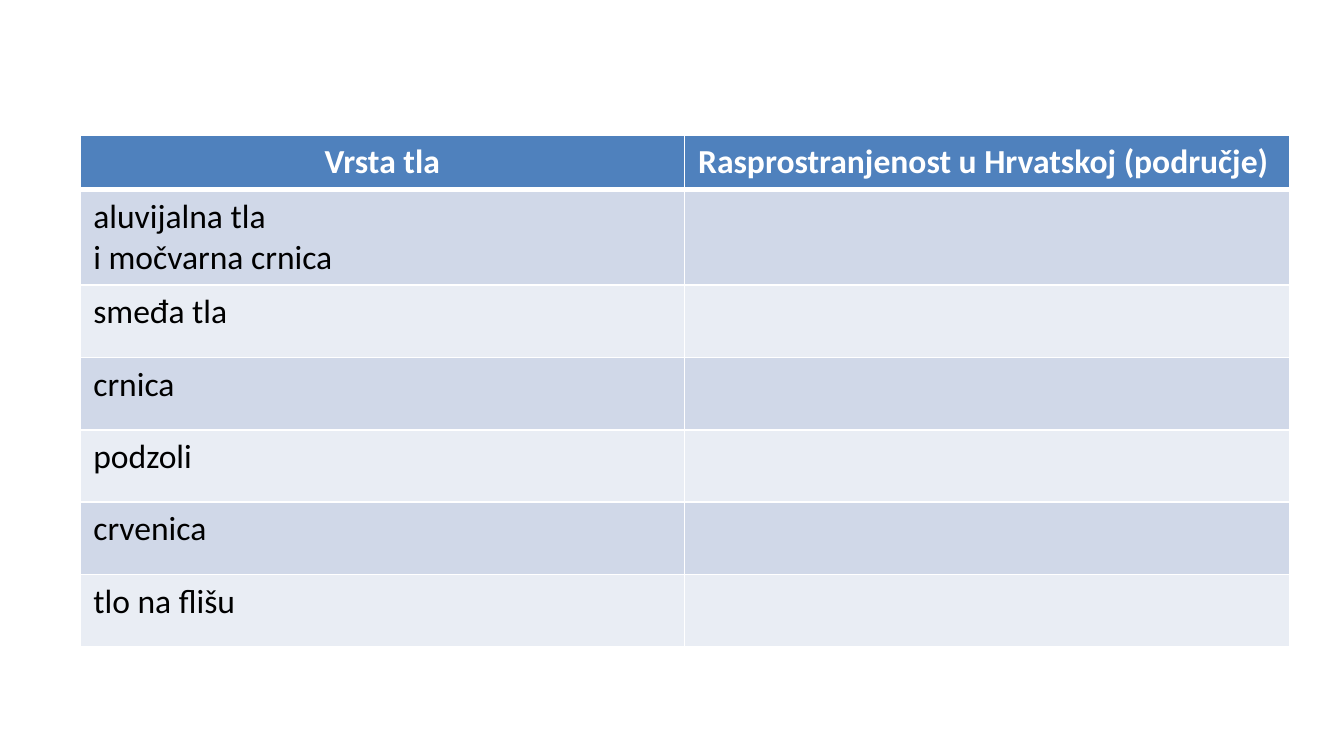
from lxml.etree import SubElement
from pptx import Presentation
from pptx.dml.color import RGBColor
from pptx.enum.text import PP_ALIGN as Align
from pptx.oxml.ns import qn
from pptx.util import Pt

WHITE = "FFFFFF"
BLACK = "000000"
HEADER_FILL = "4F81BD"
BAND_FILLS = ("D0D8E8", "E9EDF4")

HEADERS = ("Vrsta tla", "Rasprostranjenost u Hrvatskoj (područje)")
SOIL_TYPES = (
    ("aluvijalna tla", "i močvarna crnica"),
    ("smeđa tla",),
    ("crnica",),
    ("podzoli",),
    ("crvenica",),
    ("tlo na flišu",),
)
COLUMN_WIDTH = 324
HEADER_HEIGHT = 29.2
LINE_HEIGHT = 22
ROW_HEIGHT = 38.8


def color(hex_string):
    return RGBColor.from_string(hex_string)


def set_borders(cell, top=1, bottom=1):
    properties = cell._tc.get_or_add_tcPr()
    for side, width in (("L", 1), ("R", 1), ("T", top), ("B", bottom)):
        line = SubElement(properties, qn(f"a:ln{side}"), w=str(Pt(width)))
        fill = SubElement(line, qn("a:solidFill"))
        SubElement(fill, qn("a:srgbClr"), val=WHITE)


def style_cell(cell, fill, top=1, bottom=1):
    set_borders(cell, top, bottom)
    cell.fill.solid()
    cell.fill.fore_color.rgb = color(fill)


def write_cell(cell, lines, font_color, bold=False, align=Align.LEFT):
    frame = cell.text_frame
    for index, line in enumerate(lines):
        paragraph = frame.add_paragraph() if index else frame.paragraphs[0]
        paragraph.alignment = align
        run = paragraph.add_run()
        run.text = line
        run.font.name = "Calibri"
        run.font.size = Pt(18)
        run.font.bold = bold
        run.font.color.rgb = color(font_color)


def add_soil_table(slide):
    heights = [HEADER_HEIGHT] + [
        ROW_HEIGHT + LINE_HEIGHT * (len(lines) - 1) - (9.7 if len(lines) > 1 else 0)
        for lines in SOIL_TYPES
    ]
    shape = slide.shapes.add_table(
        len(heights), len(HEADERS), Pt(42.8), Pt(72.3),
        Pt(COLUMN_WIDTH * len(HEADERS)), Pt(sum(heights)),
    )
    table = shape.table
    for column in table.columns:
        column.width = Pt(COLUMN_WIDTH)
    for row, height in zip(table.rows, heights):
        row.height = Pt(height)

    for index, (header, align) in enumerate(zip(HEADERS, (Align.CENTER, Align.LEFT))):
        cell = table.cell(0, index)
        style_cell(cell, HEADER_FILL, bottom=3)
        write_cell(cell, [header], WHITE, True, align)

    for index, lines in enumerate(SOIL_TYPES):
        row = index + 1
        for column in range(len(HEADERS)):
            style_cell(table.cell(row, column), BAND_FILLS[index % 2], top=1 if index else 3)
        write_cell(table.cell(row, 0), lines, BLACK)


def main():
    presentation = Presentation()
    presentation.slide_width = Pt(720)
    presentation.slide_height = Pt(405)
    slide = presentation.slides.add_slide(presentation.slide_layouts[6])
    add_soil_table(slide)
    presentation.save("out.pptx")


if __name__ == "__main__":
    main()
